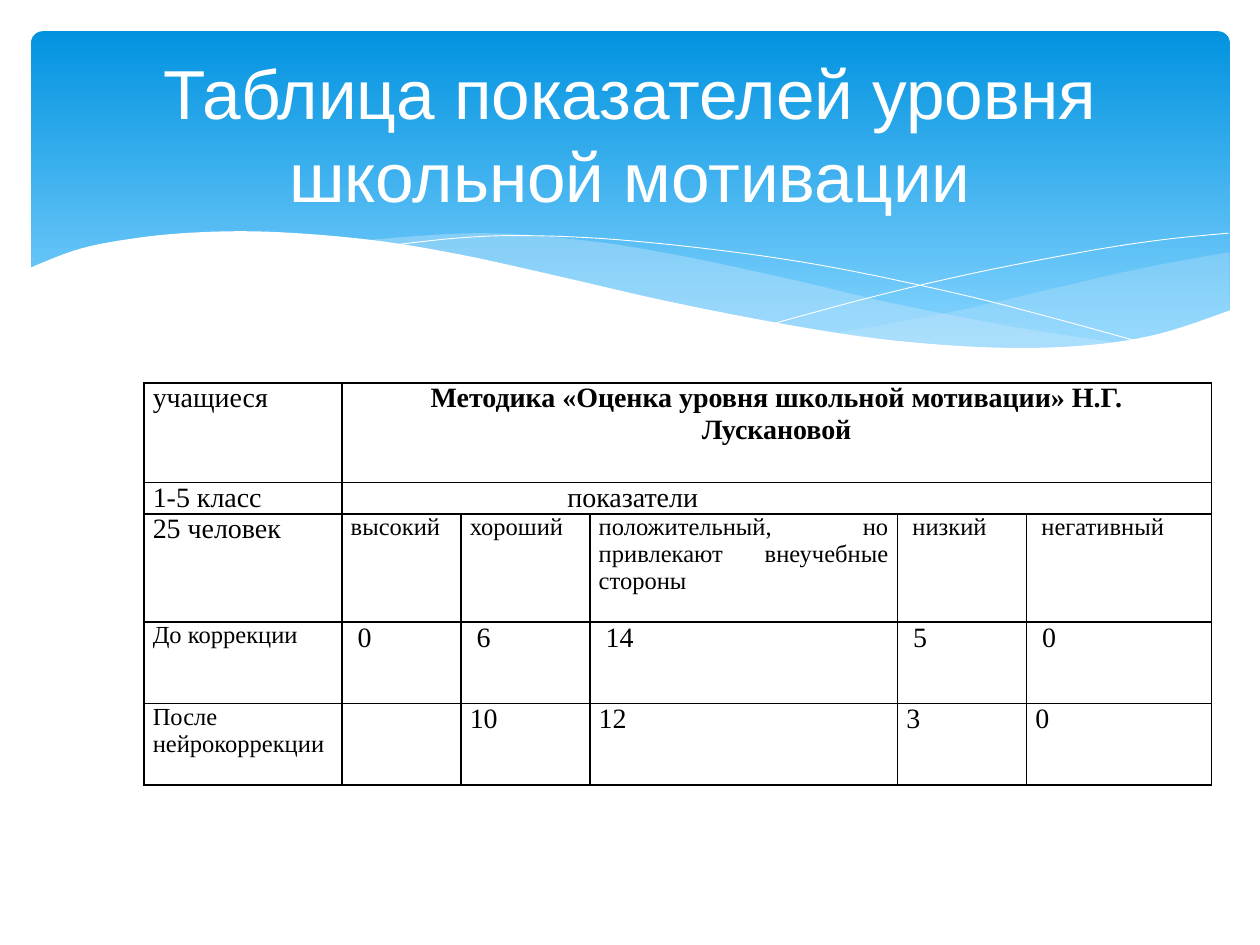
from lxml import etree
from pptx import Presentation
from pptx import util as u
from pptx.dml.color import RGBColor
from pptx.enum import shapes, text
from pptx.oxml.ns import qn

Cm, Pt = u.Cm, u.Pt
HUES = {"deep": "0293E0", "sky": "83D3FE", "pale": "C6E7FC",
        "white": "FFFFFF", "black": "000000"}
INK = {name: RGBColor.from_string(code) for name, code in HUES.items()}


def curve(knots, steps=6):
    """Smooth points (Catmull-Rom) through the knots."""
    ends = [knots[0], *knots, knots[-1]]
    dots = [knots[0]]
    for a, b, c, d in zip(ends, ends[1:], ends[2:], ends[3:]):
        for i in range(1, steps + 1):
            t = i / steps
            dots.append(tuple(
                (2 * q + (r - p) * t + (2 * p - 5 * q + 4 * r - s) * t ** 2
                 + (3 * q - p - 3 * r + s) * t ** 3) / 2
                for p, q, r, s in zip(a, b, c, d)))
    return dots


def trace(slide, dots, close):
    """Freeform through points given in centimetres."""
    pts = [(Cm(x), Cm(y)) for x, y in dots]
    pen = slide.shapes.build_freeform(*pts[0], scale=1.0)
    pen.add_line_segments(pts[1:], close=close)
    shape = pen.convert_to_shape()
    shape.shadow.inherit = False
    return shape


deck = Presentation()
deck.slide_width, deck.slide_height = Cm(25.4), Cm(19.05)
slide = deck.slides.add_slide(deck.slide_layouts[5])

# Blue panel
panel = slide.shapes.add_shape(shapes.MSO_SHAPE.ROUNDED_RECTANGLE,
                               Cm(0.63), Cm(0.63), Cm(24.16), Cm(6.86))
panel.adjustments[0] = 0.034
panel.shadow.inherit = False
panel.line.fill.background()
panel.fill.gradient()
panel.fill.gradient_angle = 270
for stop, hue, pos in zip(panel.fill.gradient_stops, ("deep", "sky"), (0, 0.9)):
    stop.color.rgb = INK[hue]
    stop.position = pos

# Filled waves: upper edge, lower edge, colour, opacity in percent
right = ([(24.79, 5.08), (23.01, 5.41), (21.13, 5.84), (19.13, 6.3), (16.79, 6.73)],
         [(16.79, 6.73), (18.26, 6.88), (19.84, 7.04), (21.44, 7.04),
          (22.99, 6.83), (24.1, 6.53), (24.79, 6.27)], "pale", 29)
long = ([(22.68, 6.93), (20.5, 6.6), (17.93, 6.1), (15.98, 5.64), (13.74, 5.16),
         (11.81, 4.85), (9.65, 4.7), (7.26, 4.85)],
        [(7.26, 4.85), (9.19, 5.16), (11.4, 5.64), (13.46, 6.1), (15.7, 6.55),
         (18.01, 6.91), (20.22, 7.06), (22.68, 6.93)], "pale", 40)
front = ([(24.82, 6.25), (23.37, 6.73), (21.92, 6.96), (20.14, 7.01), (17.98, 6.86),
          (15.9, 6.55), (13.44, 6.07), (11.35, 5.59), (9.27, 5.13), (7.42, 4.83),
          (5.36, 4.67), (3.71, 4.7), (2.41, 4.85), (1.5, 5.05), (0.58, 5.41)],
         [(0.58, 8.36), (24.82, 8.36)], "white", 100)
lines = [[(7.85, 4.95), (9.22, 4.8), (10.57, 4.75), (12.42, 4.83), (14.78, 5.08),
          (16.89, 5.41), (19.3, 5.92), (21.11, 6.38), (23.04, 6.91)],
         [(15.57, 6.53), (17.65, 5.97), (19.71, 5.49), (22, 5.05),
          (23.47, 4.83), (24.77, 4.7)]]

for top, base, hue, part in (right, long, front):
    if hue == "white":
        # Thin lines lie under the white wave
        for knots in lines:
            thread = trace(slide, curve(knots), False)
            thread.fill.background()
            thread.line.color.rgb = INK["white"]
            thread.line.width = Pt(0.5)
    wave = trace(slide, curve(top) + curve(base), True)
    wave.line.fill.background()
    wave.fill.solid()
    wave.fill.fore_color.rgb = INK[hue]
    if part < 100:
        clr = wave.fill._xPr.find(".//" + qn("a:srgbClr"))
        etree.SubElement(clr, qn("a:alpha"), val=str(part * 1000))

# Title, raised above the panel
title = slide.shapes.title
title.left, title.top, title.width, title.height = Cm(1.27), Cm(0.94), Cm(22.86), Cm(3.48)
frame = title.text_frame
frame.text = "Таблица показателей уровня школьной мотивации"
frame.word_wrap = True
frame.auto_size = text.MSO_AUTO_SIZE.NONE
frame.vertical_anchor = text.MSO_ANCHOR.MIDDLE
para = frame.paragraphs[0]
para.alignment = text.PP_ALIGN.CENTER
font = para.runs[0].font
font.name, font.size, font.color.rgb = "Arial", Pt(39.6), INK["white"]
slide.shapes._spTree.append(title._element)

# Table
rows = [
    ["учащиеся", "Методика «Оценка уровня школьной мотивации» Н.Г. Лускановой"],
    ["1-5 класс", "показатели"],
    ["25 человек", "высокий", "хороший",
     "положительный, но привлекают внеучебные стороны", " низкий", " негативный"],
    ["До коррекции", " 0", " 6", " 14", " 5", " 0"],
    ["После\nнейрокоррекции", "", "10", "12", "3", "0"],
]
wide = [3.99, 2.4, 2.6, 6.2, 2.6, 3.73]
high = [2.01, 0.63, 2.18, 1.64, 1.65]
small = {(2, c) for c in range(1, 6)} | {(3, 0), (4, 0)}
grid = slide.shapes.add_table(len(rows), len(wide), Cm(2.9), Cm(7.72),
                              Cm(sum(wide)), Cm(sum(high))).table
grid.first_row = grid.horz_banding = False
for col, size in zip(grid.columns, wide):
    col.width = Cm(size)
for row, size in zip(grid.rows, high):
    row.height = Cm(size)
for r in (0, 1):
    grid.cell(r, 1).merge(grid.cell(r, 5))

for r, row in enumerate(rows):
    for c in range(len(wide)):
        cell = grid.cell(r, c)
        cell.fill.background()
        cell.margin_left = cell.margin_right = Cm(0.18)
        cell.margin_top = cell.margin_bottom = 0
        # Black borders come before the fill
        props = cell._tc.get_or_add_tcPr()
        for i, side in enumerate("LRTB"):
            edge = etree.Element(qn("a:ln" + side), w=str(Pt(1)))
            fill = etree.SubElement(edge, qn("a:solidFill"))
            etree.SubElement(fill, qn("a:srgbClr"), val=HUES["black"])
            props.insert(i, edge)
        if c >= len(row):
            continue
        cell.text_frame.text = row[c]
        for para in cell.text_frame.paragraphs:
            para.alignment = (text.PP_ALIGN.LEFT if (r, c) == (4, 0)
                              else text.PP_ALIGN.JUSTIFY)
            for run in para.runs:
                font = run.font
                font.name, font.color.rgb = "Times New Roman", INK["black"]
                font.size = Pt(14 if (r, c) in small else 16)
                font.bold = (r, c) == (0, 1)

# Headings across the five levels
head = grid.cell(0, 1)
head.margin_left = head.margin_right = Cm(0.8)
head.text_frame.paragraphs[0].alignment = text.PP_ALIGN.CENTER
grid.cell(1, 1).margin_left = Cm(4.55)

deck.save("out.pptx")
